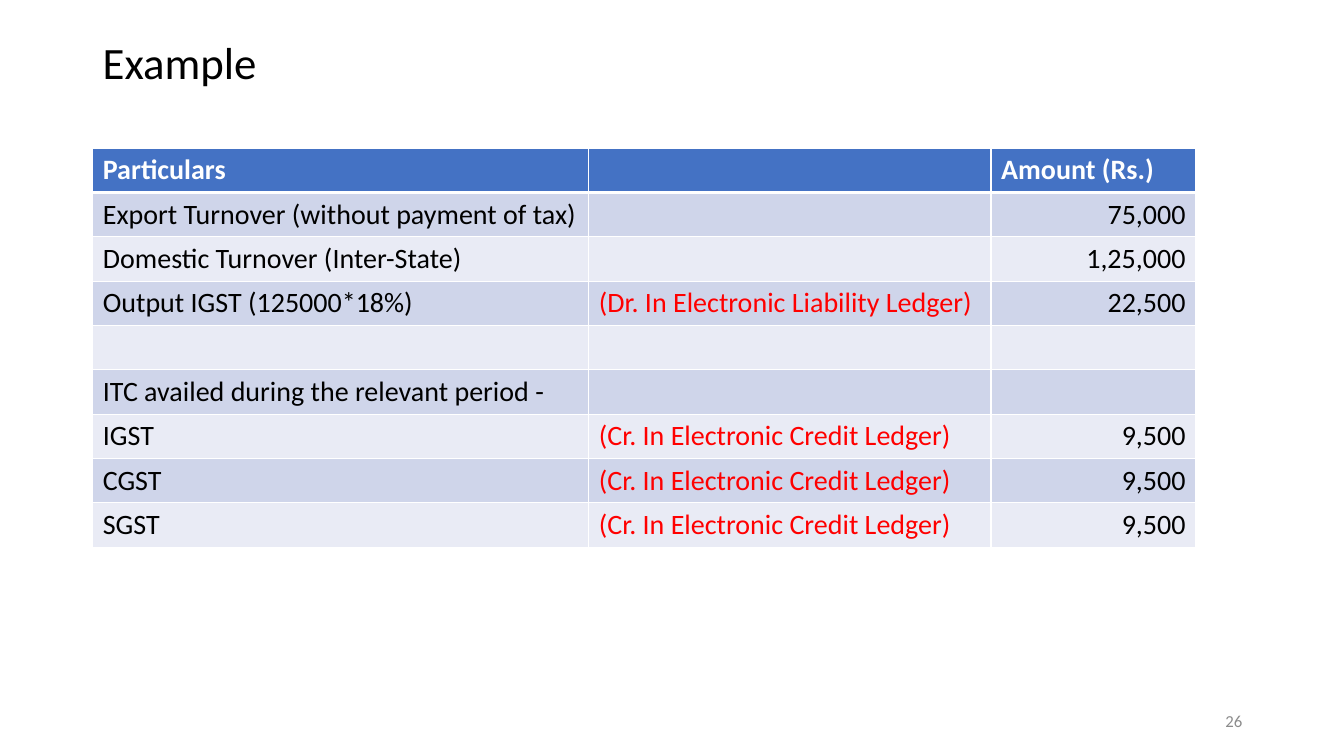
from dataclasses import dataclass
from lxml.etree import SubElement
from pptx import Presentation
from pptx.dml.color import RGBColor
from pptx.enum.text import MSO_ANCHOR, PP_ALIGN
from pptx.oxml.ns import qn
from pptx.util import Inches, Pt


@dataclass(frozen=True)
class Theme:
    font: str = "Calibri"
    black: str = "000000"
    white: str = "FFFFFF"
    red: str = "FF0000"
    gray: str = "8C8C8C"
    head: str = "4472C4"
    bands: tuple = ("CFD5EA", "E9EBF5")
    title: int = 32
    body: int = 20
    small: int = 12


THEME = Theme()
CREDIT = "(Cr. In Electronic Credit Ledger)"
ROWS = [
    ("Particulars", "", "Amount (Rs.)"),
    ("Export Turnover (without payment of tax)", "", "75,000"),
    ("Domestic Turnover (Inter-State)", "", "1,25,000"),
    ("Output IGST (125000*18%)", "(Dr. In Electronic Liability Ledger)", "22,500"),
    ("", "", ""),
    ("ITC availed during the relevant period -", "", ""),
    ("IGST", CREDIT, "9,500"),
    ("CGST", CREDIT, "9,500"),
    ("SGST", CREDIT, "9,500"),
]
WIDTHS = (4.92, 3.99, 2.03)


def write(frame, text, size, color, align=PP_ALIGN.LEFT, bold=False):
    frame.text = text
    para = frame.paragraphs[0]
    para.alignment = align
    for run in para.runs:
        run.font.name = THEME.font
        run.font.size = Pt(size)
        run.font.bold = bold
        run.font.color.rgb = RGBColor.from_string(color)
    return para


def add_text(slide, box, text, size, color, align=PP_ALIGN.LEFT):
    frame = slide.shapes.add_textbox(*map(Inches, box)).text_frame
    frame.word_wrap = True
    frame.vertical_anchor = MSO_ANCHOR.MIDDLE
    return write(frame, text, size, color, align)


def add_title(slide, box):
    para = add_text(slide, box, "Example", THEME.title, THEME.black)
    para.line_spacing = 0.9


def add_number(slide, box):
    add_text(slide, box, "26", THEME.small, THEME.gray, PP_ALIGN.RIGHT)


def add_border(cell, side, width):
    props = cell._tc.get_or_add_tcPr()
    line = SubElement(props, qn(f"a:ln{side}"), w=str(Pt(width)))
    fill = SubElement(line, qn("a:solidFill"))
    SubElement(fill, qn("a:srgbClr"), val=THEME.white)


def style_cell(cell, text, row, col):
    head = row == 0
    for side in "LRTB":
        edge = (head and side == "B") or (row == 1 and side == "T")
        add_border(cell, side, 3 if edge else 1)
    cell.fill.solid()
    shade = THEME.head if head else THEME.bands[(row - 1) % 2]
    cell.fill.fore_color.rgb = RGBColor.from_string(shade)
    color = THEME.white if head else THEME.red if col == 1 else THEME.black
    align = PP_ALIGN.RIGHT if col == 2 and not head else PP_ALIGN.LEFT
    write(cell.text_frame, text, THEME.body, color, align, head)


def add_ledger(slide, box):
    shape = slide.shapes.add_table(len(ROWS), len(WIDTHS), *map(Inches, box))
    table = shape.table
    for column, width in zip(table.columns, WIDTHS):
        column.width = Inches(width)
    for row, texts in enumerate(ROWS):
        table.rows[row].height = Inches(box[3] / len(ROWS))
        for col, text in enumerate(texts):
            style_cell(table.cell(row, col), text, row, col)


def main():
    deck = Presentation()
    deck.slide_width, deck.slide_height = Inches(13.33), Inches(7.5)
    slide = deck.slides.add_slide(deck.slide_layouts[6])
    add_title(slide, (0.92, 0.4, 11.5, 0.48))
    add_ledger(slide, (0.92, 1.47, sum(WIDTHS), 3.96))
    add_number(slide, (9.42, 6.95, 3, 0.4))
    deck.save("out.pptx")


if __name__ == "__main__":
    main()
